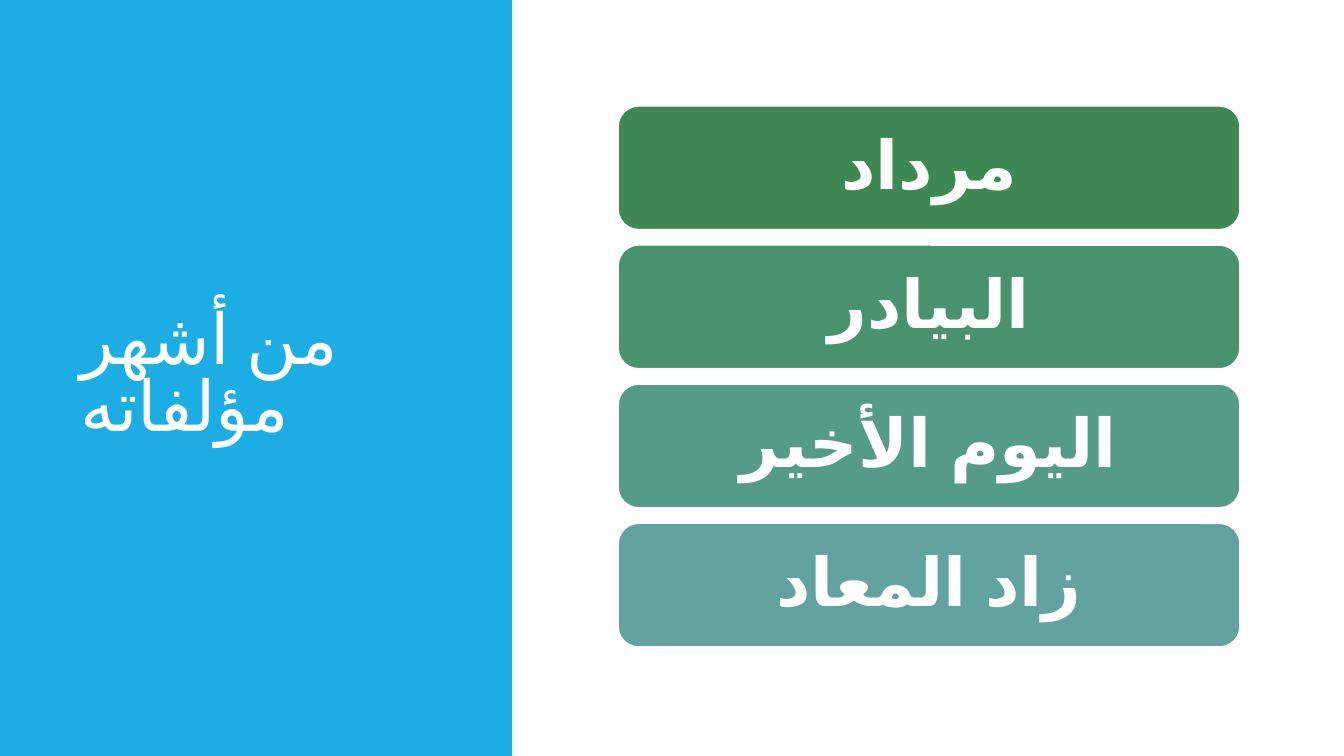
import pptx
import pptx.util
import pptx.dml.color
import pptx.enum.lang
import pptx.enum.shapes
import pptx.enum.text

Inches = pptx.util.Inches
Pt = pptx.util.Pt
Kind = pptx.enum.shapes.MSO_SHAPE
Align = pptx.enum.text.PP_ALIGN

# Content
TITLE = "من أشهر مؤلفاته"
BOOKS = [
    ("مرداد", "3E8853"),
    ("البيادر", "49926E"),
    ("اليوم الأخير", "549C88"),
    ("زاد المعاد", "62A39F"),
]
WHITE, BLUE = "FFFFFF", "1CADE4"

# Layout in inches
WIDE, HIGH = 13.33, 7.5
LEFT, TOP, BAR_W, BAR_H, STEP = 6.13, 1.05, 6.17, 1.23, 1.38


def color(code):
    return pptx.dml.color.RGBColor.from_string(code)


def write(shape, text, font, size, align, inset=0.1, bold=False, space=0.9):
    frame = shape.text_frame
    frame.word_wrap = True
    frame.auto_size = pptx.enum.text.MSO_AUTO_SIZE.NONE
    frame.vertical_anchor = pptx.enum.text.MSO_ANCHOR.MIDDLE
    frame.margin_left = frame.margin_right = Inches(inset)
    para = frame.paragraphs[0]
    para.alignment = align
    para.line_spacing = space
    run = para.add_run()
    run.text = text
    run.font.name = font
    run.font.size = Pt(size)
    run.font.bold = bold
    run.font.color.rgb = color(WHITE)
    run.font.language_id = pptx.enum.lang.MSO_LANGUAGE_ID.ARABIC
    return para


def block(kind, left, top, width, height, fill):
    shape = slide.shapes.add_shape(
        kind, Inches(left), Inches(top), Inches(width), Inches(height))
    shape.shadow.inherit = False
    shape.fill.solid()
    shape.fill.fore_color.rgb = color(fill)
    shape.line.fill.background()
    return shape


deck = pptx.Presentation()
deck.slide_width, deck.slide_height = Inches(WIDE), Inches(HIGH)
slide = deck.slides.add_slide(deck.slide_layouts[5])

# Blue side panel, placed behind the title
panel = block(Kind.RECTANGLE, 0, 0, 5.08, HIGH, BLUE)
slide.shapes._spTree.insert(2, panel._element)

# Title, right-to-left script
title = slide.shapes.title
title.left, title.top = Inches(0.7), Inches(0.7)
title.width, title.height = Inches(3.74), Inches(6.09)
para = write(title, TITLE, "Arial", 50, Align.LEFT, space=0.8)
props = para._p.get_or_add_pPr()
props.set("rtl", "1")
props.set("marL", str(Inches(0.1)))
props.set("indent", str(Inches(-0.1)))

# One rounded bar per book
for row, (book, fill) in enumerate(BOOKS):
    bar = block(Kind.ROUNDED_RECTANGLE, LEFT, TOP + row * STEP, BAR_W, BAR_H, fill)
    bar.line.color.rgb = color(WHITE)
    bar.line.width = Pt(1.25)
    write(bar, book, "Calibri", 48, Align.CENTER, inset=0.2, bold=True)

deck.save("out.pptx")
